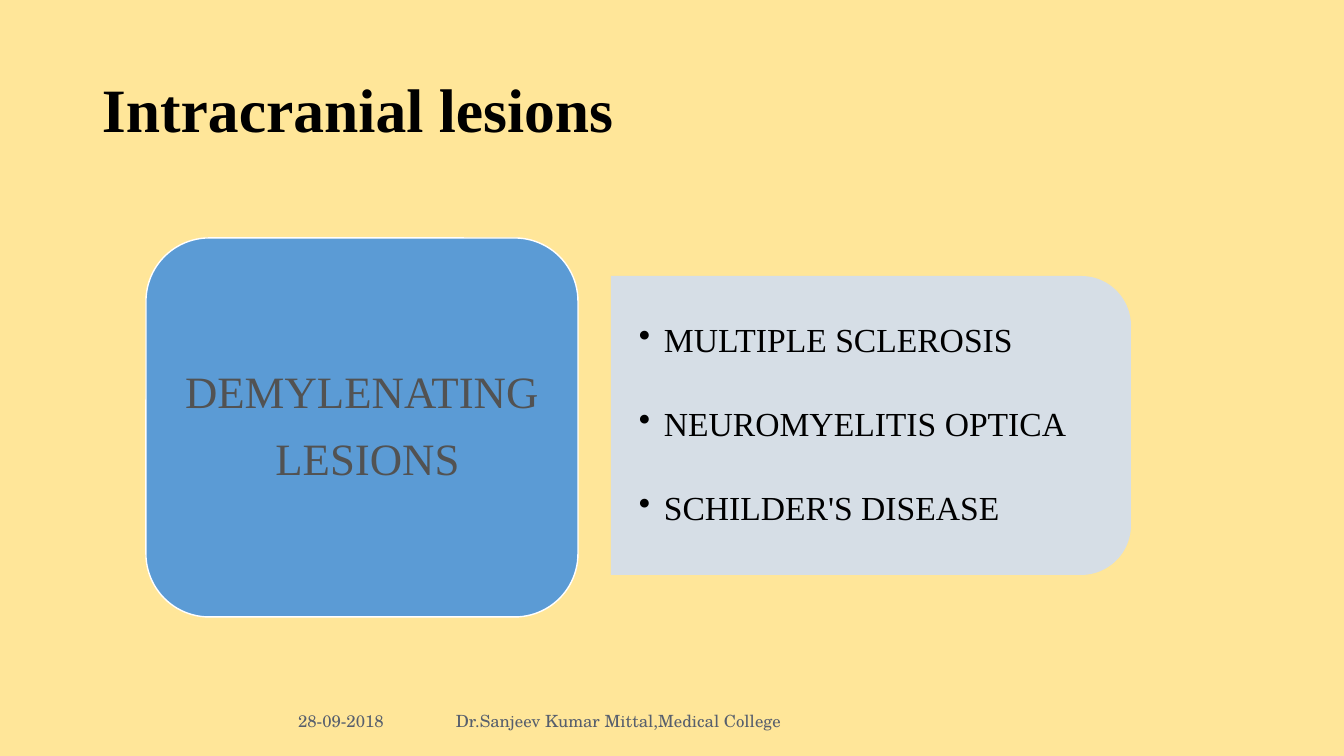
import pptx
import pptx.dml.color
import pptx.enum.shapes
import pptx.enum.text
import pptx.oxml
import pptx.oxml.ns
import pptx.util
from lxml import etree

TITLE = "Intracranial lesions"
CATEGORY = ["DEMYLENATING", " LESIONS"]
DISEASES = ["MULTIPLE SCLEROSIS", "NEUROMYELITIS OPTICA", "SCHILDER'S DISEASE"]
DATE = "28-09-2018"
AUTHOR = "Dr.Sanjeev Kumar Mittal,Medical College"

COLORS = {
    "background": "FFE699",
    "title": "000000",
    "category": "5B9BD5",
    "category_line": "FFFFFF",
    "category_text": "525252",
    "panel": "D2DEEF",
    "footer": "575F6D",
}
SERIF = "Times New Roman"
FOOTER_FONT = "TeX Gyre Schola"

# left, top, width, height in px
SLIDE_SIZE = (1344, 756)
TITLE_BOX = (92, 40, 1159, 146)
CATEGORY_BOX = (146, 238, 432, 379)
PANEL_BOX = (611, 276, 520, 299)
DISEASE_BOX = (612, 291, 504, 269)
DATE_BOX = (92, 701, 302, 40)
AUTHOR_BOX = (446, 701, 454, 40)
EMU_PER_PX = 914400 / 100.8

ALIGN = pptx.enum.text.PP_ALIGN
SHAPES = pptx.enum.shapes.MSO_SHAPE


def px(length):
    return pptx.util.Emu(round(length * EMU_PER_PX))


def rgb(name):
    return pptx.dml.color.RGBColor.from_string(COLORS[name])


def write(shape, lines, size, color, font=SERIF, align=ALIGN.LEFT, bold=False,
          spacing=0.9, gap=0, margins=(10, 5)):
    """Fill a shape with one paragraph per line, centred vertically."""
    frame = shape.text_frame
    frame.text = "\n".join(lines)
    frame.word_wrap = True
    frame.auto_size = pptx.enum.text.MSO_AUTO_SIZE.NONE
    frame.vertical_anchor = pptx.enum.text.MSO_ANCHOR.MIDDLE
    frame.margin_left = frame.margin_right = px(margins[0])
    frame.margin_top = frame.margin_bottom = px(margins[1])
    for index, paragraph in enumerate(frame.paragraphs):
        paragraph.alignment = align
        paragraph.line_spacing = spacing
        paragraph.space_before = pptx.util.Pt(gap if index else 0)
        for run in paragraph.runs:
            run.font.name = font
            run.font.size = pptx.util.Pt(size)
            run.font.bold = bold
            run.font.color.rgb = rgb(color)


def add_box(slide, kind, box, fill):
    shape = slide.shapes.add_shape(kind, *map(px, box))
    shape.shadow.inherit = False
    shape.fill.solid()
    shape.fill.fore_color.rgb = rgb(fill)
    return shape


def add_text(slide, box, lines, size, color, **style):
    shape = slide.shapes.add_textbox(*map(px, box))
    write(shape, lines, size, color, **style)
    return shape


def add_bullets(shape, indent):
    for paragraph in shape.text_frame.paragraphs:
        properties = paragraph._p.get_or_add_pPr()
        properties.set("marL", str(px(indent)))
        properties.set("indent", str(-px(indent)))
        bullet = etree.SubElement(properties, pptx.oxml.ns.qn("a:buChar"))
        bullet.set("char", "•")


def add_panel(slide):
    """Draw the pale panel: top-rounded shape turned so its round side faces right."""
    left, top, width, height = PANEL_BOX
    shift = (width - height) / 2
    panel = add_box(slide, SHAPES.ROUND_2_SAME_RECTANGLE,
                    (left + shift, top - shift, height, width), "panel")
    panel.rotation = 90
    panel.line.fill.background()
    color = panel.fill._xPr.find(".//" + pptx.oxml.ns.qn("a:srgbClr"))
    etree.SubElement(color, pptx.oxml.ns.qn("a:alpha")).set("val", "90000")


def main():
    presentation = pptx.Presentation()
    presentation.slide_width, presentation.slide_height = map(px, SLIDE_SIZE)
    slide = presentation.slides.add_slide(presentation.slide_layouts[5])
    slide.background.fill.solid()
    slide.background.fill.fore_color.rgb = rgb("background")

    title = slide.shapes.title
    title.left, title.top, title.width, title.height = map(px, TITLE_BOX)
    write(title, [TITLE], 44, "title", bold=True)

    add_panel(slide)
    diseases = add_text(slide, DISEASE_BOX, DISEASES, 24, "title",
                        gap=34, margins=(27, 14))
    add_bullets(diseases, 25)

    category = add_box(slide, SHAPES.ROUNDED_RECTANGLE, CATEGORY_BOX, "category")
    category.line.color.rgb = rgb("category_line")
    category.line.width = pptx.util.Pt(1)
    write(category, CATEGORY, 32, "category_text", align=ALIGN.CENTER,
          gap=13, margins=(13, 7))

    footer = {"font": FOOTER_FONT, "spacing": 1.0}
    add_text(slide, DATE_BOX, [DATE], 12, "footer", align=ALIGN.RIGHT, **footer)
    add_text(slide, AUTHOR_BOX, [AUTHOR], 12, "footer", **footer)

    presentation.save("out.pptx")


if __name__ == "__main__":
    main()
